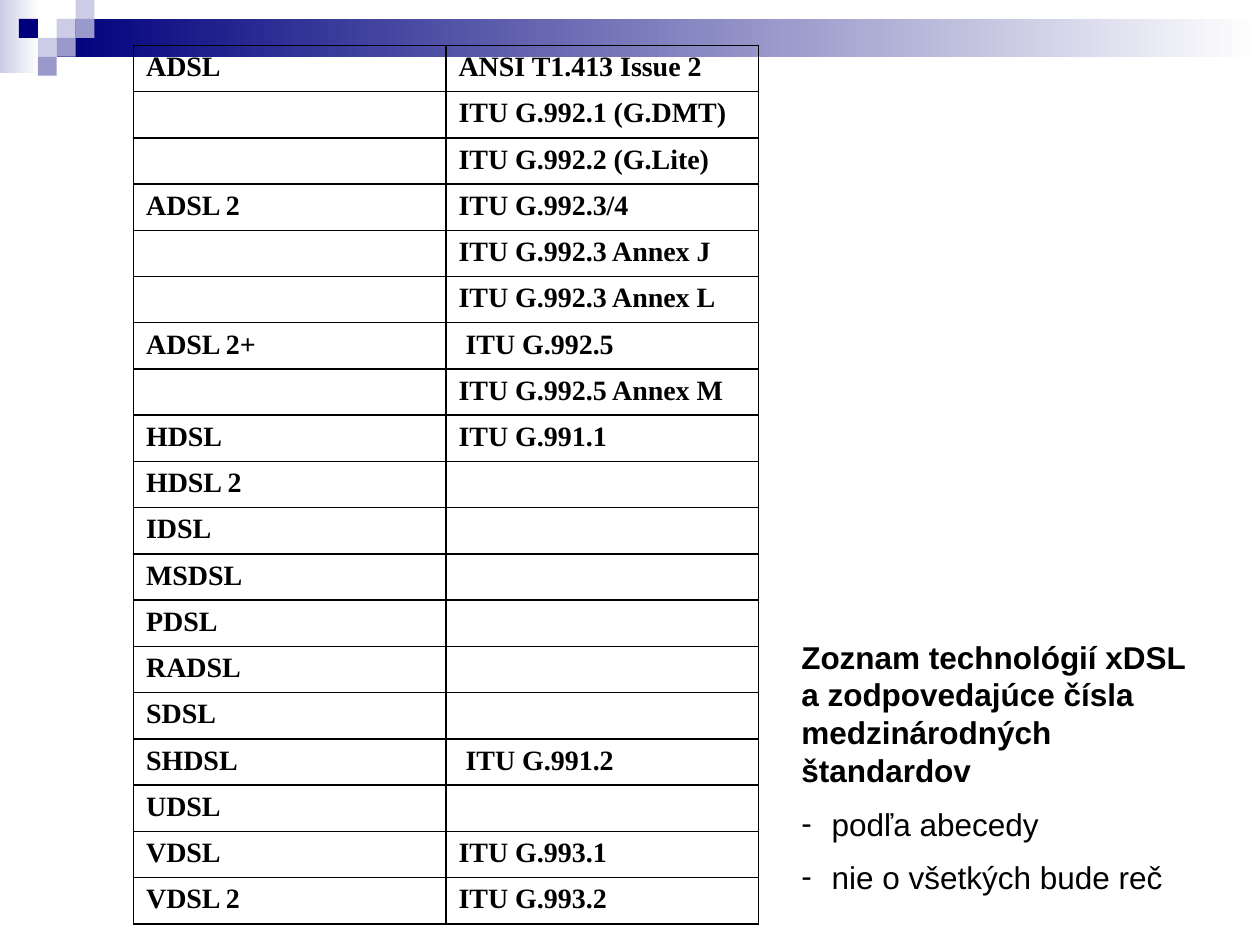
from dataclasses import dataclass

from lxml.etree import SubElement
from pptx import Presentation
from pptx.dml.color import RGBColor
from pptx.enum.shapes import MSO_SHAPE
from pptx.enum.text import MSO_ANCHOR, MSO_AUTO_SIZE
from pptx.oxml.ns import qn
from pptx.util import Inches, Pt


@dataclass(frozen=True)
class Theme:
    navy: str = "00007D"
    mid: str = "9999CC"
    pale: str = "CCCCE6"
    white: str = "FFFFFF"
    black: str = "000000"
    table_font: str = "Times New Roman"
    list_font: str = "Arial"
    table_size: int = 16
    list_size: int = 18
    line: float = 1


theme = Theme()

# Content
STANDARDS = [
    ("ADSL", "ANSI T1.413 Issue 2"),
    ("", "ITU G.992.1 (G.DMT)"),
    ("", "ITU G.992.2 (G.Lite)"),
    ("ADSL 2", "ITU G.992.3/4"),
    ("", "ITU G.992.3 Annex J"),
    ("", "ITU G.992.3 Annex L"),
    ("ADSL 2+", " ITU G.992.5"),
    ("", "ITU G.992.5 Annex M"),
    ("HDSL", "ITU G.991.1"),
    ("HDSL 2", ""),
    ("IDSL", ""),
    ("MSDSL", ""),
    ("PDSL", ""),
    ("RADSL", ""),
    ("SDSL", ""),
    ("SHDSL", " ITU G.991.2"),
    ("UDSL", ""),
    ("VDSL", "ITU G.993.1"),
    ("VDSL 2", "ITU G.993.2"),
]
HEADING = "Zoznam technológií xDSL a zodpovedajúce čísla medzinárodných štandardov"
NOTES = ["podľa abecedy", "nie o všetkých bude reč"]

# Decoration: gradient bars, then squares as (column, row, colour)
UNIT = 0.15
BARS = [
    (0, 0, 0.31, 0.58, theme.pale),
    (3 * UNIT, UNIT, 10 - 3 * UNIT, 2 * UNIT, theme.navy),
]
SQUARES = [
    (3, 1, theme.pale), (4, 0, theme.pale), (4, 1, theme.mid), (2, 2, theme.pale),
    (1, 1, theme.navy), (3, 2, theme.mid), (2, 3, theme.mid),
]


def rgb(value):
    return RGBColor.from_string(value)


def add_block(s, x, y, w, h, colour, fade=False):
    sp = s.shapes.add_shape(MSO_SHAPE.RECTANGLE, *map(Inches, (x, y, w, h)))
    sp.shadow.inherit = False
    sp.line.fill.background()
    if fade:
        sp.fill.gradient()
        sp.fill.gradient_angle = 0
        for stop, c in zip(sp.fill.gradient_stops, (colour, theme.white)):
            stop.color.rgb = rgb(c)
    else:
        sp.fill.solid()
        sp.fill.fore_color.rgb = rgb(colour)


def format_font(font, name, size, bold):
    font.name, font.size, font.bold = name, Pt(size), bold
    font.color.rgb = rgb(theme.black)


def add_borders(cell):
    tcPr = cell._tc.get_or_add_tcPr()
    for i, side in enumerate(("lnL", "lnR", "lnT", "lnB")):
        ln = tcPr.makeelement(qn(f"a:{side}"), {"w": str(Pt(theme.line))})
        fill = SubElement(ln, qn("a:solidFill"))
        SubElement(fill, qn("a:srgbClr"), val=theme.black)
        tcPr.insert(i, ln)


def fill_cell(cell, text):
    cell.text = text
    cell.fill.background()
    add_borders(cell)
    p = cell.text_frame.paragraphs[0]
    for r in p.runs:
        format_font(r.font, theme.table_font, theme.table_size, True)
    if not text:  # keeps empty cells as low as the filled ones
        end = SubElement(p._p, qn("a:endParaRPr"), sz=str(theme.table_size * 100))
        SubElement(end, qn("a:latin"), typeface=theme.table_font)


def add_standards(s, x, y, col_w, row_h):
    rows, cols = len(STANDARDS), len(STANDARDS[0])
    frame = s.shapes.add_table(rows, cols, Inches(x), Inches(y),
                               Inches(col_w * cols), Inches(row_h * rows))
    table = frame.table
    table.first_row = table.horz_banding = False
    for i, row in enumerate(STANDARDS):
        for j, text in enumerate(row):
            fill_cell(table.cell(i, j), text)


def fill_list(body, x, y, w, h, indent):
    body.left, body.top, body.width, body.height = map(Inches, (x, y, w, h))
    tf = body.text_frame
    tf.text = "\n".join([HEADING, *NOTES])
    tf.word_wrap = True
    tf.auto_size = MSO_AUTO_SIZE.SHAPE_TO_FIT_TEXT
    tf.vertical_anchor = MSO_ANCHOR.TOP
    for i, p in enumerate(tf.paragraphs):
        is_note = i > 0
        p.space_before = Pt(theme.list_size / 2 if is_note else 0)
        format_font(p.runs[0].font, theme.list_font, theme.list_size, not is_note)
        pPr = p._p.get_or_add_pPr()
        step = Inches(indent) if is_note else 0
        pPr.set("marL", str(step))
        pPr.set("indent", str(-step))
        if is_note:
            SubElement(pPr, qn("a:buChar"), char="-")
        else:
            SubElement(pPr, qn("a:buNone"))


def main():
    prs = Presentation()
    prs.slide_width, prs.slide_height = Inches(10), Inches(7.5)
    s = prs.slides.add_slide(prs.slide_layouts[1])
    title, body = s.placeholders
    title.element.getparent().remove(title.element)

    # Header decoration
    for bar in BARS:
        add_block(s, *bar, fade=True)
    for col, row, colour in SQUARES:
        add_block(s, col * UNIT, row * UNIT, UNIT, UNIT, colour)

    # Table of standards and the list beside it
    add_standards(s, x=1.06, y=0.36, col_w=2.48, row_h=0.34)
    fill_list(body, x=6.26, y=5.01, w=3.39, h=2.2, indent=0.24)

    prs.save("out.pptx")


if __name__ == "__main__":
    main()
